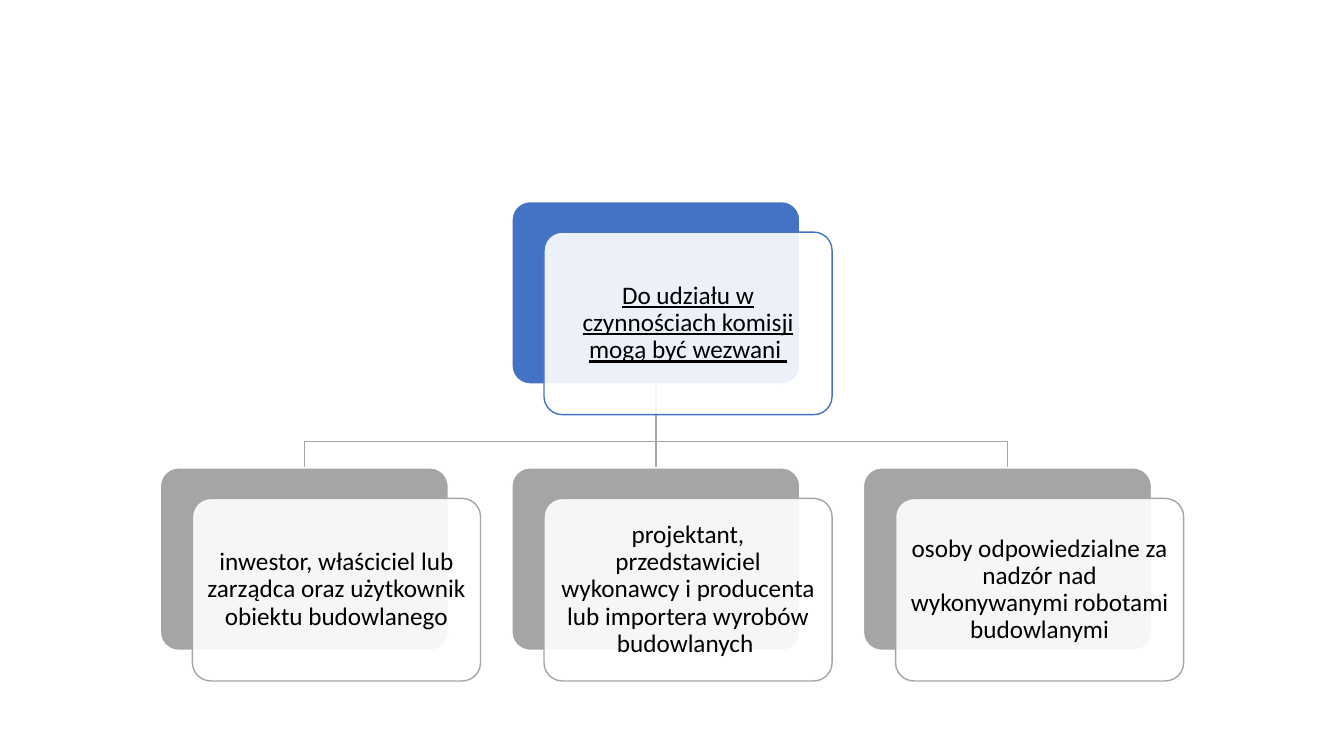
from lxml import etree
from pptx import Presentation
from pptx.dml.color import RGBColor
from pptx.enum.shapes import MSO_CONNECTOR, MSO_SHAPE
from pptx.enum.text import MSO_ANCHOR, PP_ALIGN
from pptx.oxml.ns import qn
from pptx.util import Cm, Pt

SUMMONS = "Do udziału w czynnościach komisji mogą być wezwani "
PARTICIPANTS = [
    "inwestor, właściciel lub zarządca oraz użytkownik obiektu budowlanego",
    "projektant, przedstawiciel wykonawcy i producenta lub importera wyrobów budowlanych ",
    "osoby odpowiedzialne za nadzór nad wykonywanymi robotami budowlanymi",
]

BLUE = RGBColor(0x44, 0x72, 0xC4)
GRAY = RGBColor(0xA5, 0xA5, 0xA5)
WHITE = RGBColor(0xFF, 0xFF, 0xFF)
BLACK = RGBColor(0, 0, 0)

CARD_W, CARD_H = 7.26, 4.6
SHIFT_X, SHIFT_Y = 0.81, 0.77
CENTER, PITCH = 16.53, 8.86
SUMMONS_TOP, PARTICIPANTS_TOP = 5.08, 11.79
SUMMONS_BOTTOM = SUMMONS_TOP + CARD_H
BEND = 11.12

prs = Presentation()
prs.slide_width, prs.slide_height = Cm(33.87), Cm(19.05)
slide = prs.slides.add_slide(prs.slide_layouts[6])
shapes = slide.shapes


def add_panel(left, top, fill, line):
    panel = shapes.add_shape(MSO_SHAPE.ROUNDED_RECTANGLE,
                             Cm(left), Cm(top), Cm(CARD_W), Cm(CARD_H))
    panel.adjustments[0] = 0.1
    panel.shadow.inherit = False
    panel.fill.solid()
    panel.fill.fore_color.rgb = fill
    panel.line.color.rgb = line
    panel.line.width = Pt(1)
    return panel


def add_card(center, top, text, color, underline=False):
    left = center - CARD_W / 2
    add_panel(left, top, color, WHITE)
    front = add_panel(left + SHIFT_X, top + SHIFT_Y, WHITE, color)
    white = front.fill._xPr.find(qn("a:solidFill"))[0]
    etree.SubElement(white, qn("a:alpha"), val="90000")

    frame = front.text_frame
    frame.word_wrap = True
    frame.vertical_anchor = MSO_ANCHOR.MIDDLE
    frame.margin_left = frame.margin_right = Cm(0.18)
    frame.margin_top = frame.margin_bottom = Cm(0.18)
    paragraph = frame.paragraphs[0]
    run = paragraph.add_run()
    run.text = text
    run.font.underline = underline
    paragraph.alignment = PP_ALIGN.CENTER
    paragraph.line_spacing = 0.9
    paragraph.font.name = "Calibri"
    paragraph.font.size = Pt(18)
    paragraph.font.color.rgb = BLACK


def add_branch(center):
    if center == CENTER:
        branch = shapes.add_connector(
            MSO_CONNECTOR.STRAIGHT, Cm(center), Cm(SUMMONS_BOTTOM),
            Cm(center), Cm(PARTICIPANTS_TOP))
        etree.SubElement(branch._element.spPr, qn("a:effectLst"))
    else:
        builder = shapes.build_freeform(Cm(CENTER), Cm(SUMMONS_BOTTOM))
        builder.add_line_segments(
            [(Cm(CENTER), Cm(BEND)), (Cm(center), Cm(BEND)),
             (Cm(center), Cm(PARTICIPANTS_TOP))], close=False)
        branch = builder.convert_to_shape()
        branch.fill.background()
        branch.shadow.inherit = False
    branch.line.color.rgb = GRAY
    branch.line.width = Pt(1)


centers = [CENTER + (i - 1) * PITCH for i in range(len(PARTICIPANTS))]
for center in centers:
    add_branch(center)
add_card(CENTER, SUMMONS_TOP, SUMMONS, BLUE, underline=True)
for center, participant in zip(centers, PARTICIPANTS):
    add_card(center, PARTICIPANTS_TOP, participant, GRAY)

prs.save("out.pptx")
